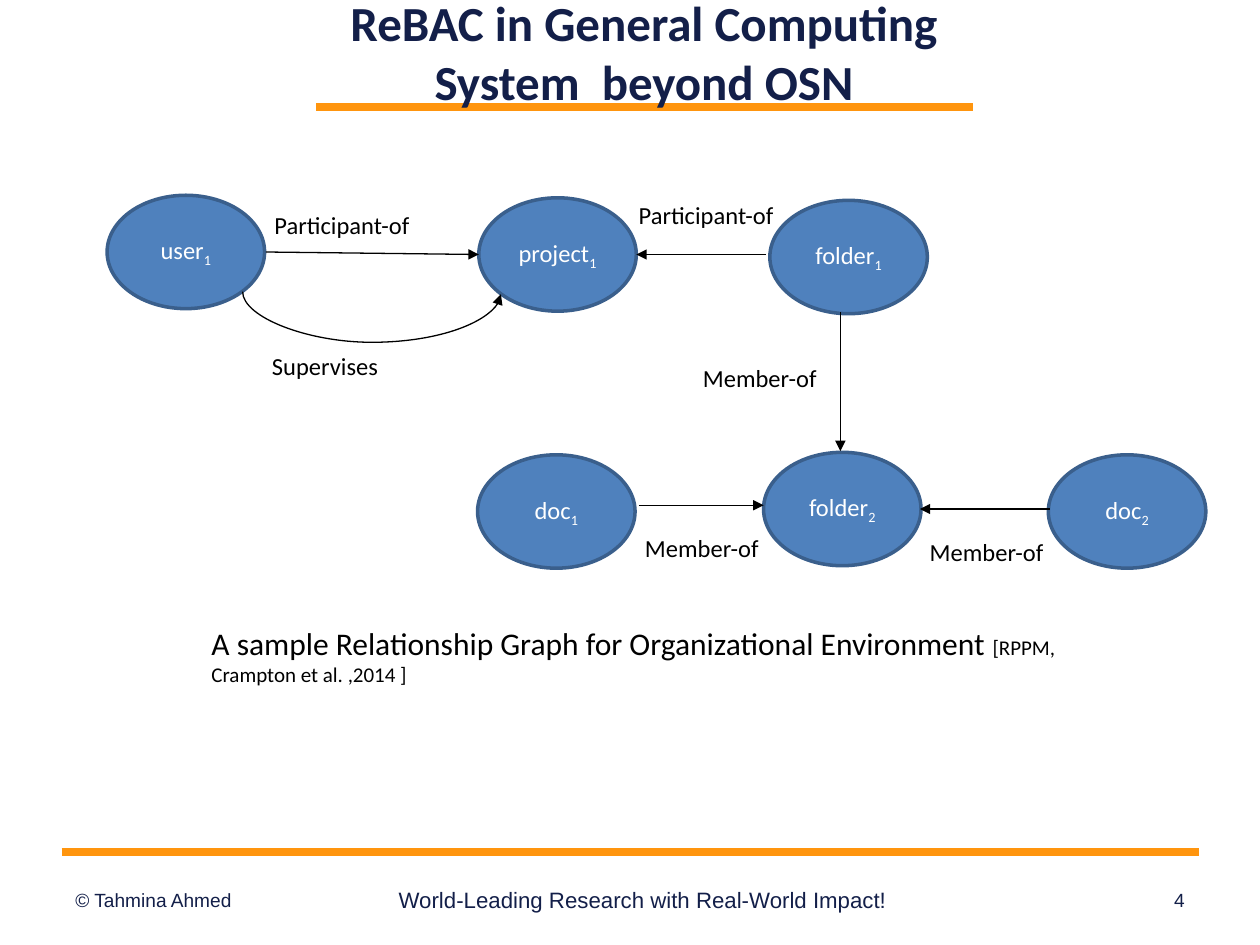
from lxml.etree import SubElement
from pptx import Presentation
from pptx.dml.color import RGBColor
from pptx.enum.shapes import MSO_CONNECTOR as LINK, MSO_SHAPE as SHAPE
from pptx.enum.text import MSO_ANCHOR as ANCHOR, PP_ALIGN as ALIGN
from pptx.oxml.ns import qn
from pptx.util import Inches, Pt

NAVY, ORANGE, BLUE, EDGE = "131F49", "FF950E", "4F81BD", "3A5F8C"
BLACK, WHITE = "000000", "FFFFFF"


def paint(target, code):
    """Give a fill, or the colour of a font, one solid colour."""
    target.solid()
    target.fore_color.rgb = RGBColor.from_string(code)


class Page:
    base = {"name": "Calibri", "size": 14, "bold": False, "color": BLACK}
    node = (1.25, 0.9)

    def __init__(self, deck):
        self.slide = deck.slides.add_slide(deck.slide_layouts[6])
        self.shapes = self.slide.shapes
        paint(self.slide.background.fill, WHITE)

    def run(self, para, text, **style):
        run = para.add_run()
        run.text = text
        look = {**self.base, **style}
        paint(run.font.fill, look.pop("color"))
        look["size"] = Pt(look["size"])
        for key, value in look.items():
            setattr(run.font, key, value)
        return run

    def text(self, box, text, align=ALIGN.LEFT, anchor=ANCHOR.TOP, **style):
        frame = self.shapes.add_textbox(*map(Inches, box)).text_frame
        frame.word_wrap = True
        frame.vertical_anchor = anchor
        para = frame.paragraphs[0]
        para.alignment = align
        self.run(para, text, **style)
        return para

    def oval(self, left, top, name, sub):
        oval = self.shapes.add_shape(
            SHAPE.OVAL, *map(Inches, (left, top, *self.node)))
        oval.shadow.inherit = False
        paint(oval.fill, BLUE)
        paint(oval.line.fill, EDGE)
        oval.line.width = Pt(2)
        frame = oval.text_frame
        frame.vertical_anchor = ANCHOR.MIDDLE
        para = frame.paragraphs[0]
        para.alignment = ALIGN.CENTER
        self.run(para, name, color=WHITE)
        low = self.run(para, sub, color=WHITE)
        low._r.get_or_add_rPr().set("baseline", "-25000")

    def line(self, ends, color=BLACK, width=0.75, kind=LINK.STRAIGHT):
        line = self.shapes.add_connector(kind, *map(Inches, ends))
        paint(line.line.fill, color)
        line.line.width = Pt(width)
        SubElement(line._element.spPr, qn("a:effectLst"))
        return line

    def arrow(self, ends, kind=LINK.STRAIGHT):
        line = self.line(ends, kind=kind)
        SubElement(line.line._get_or_add_ln(), qn("a:tailEnd"), type="triangle")
        return line

    def curve(self, ends, turn, bend):
        """Curved arrow, turned by degrees, bent by a multiple of its width."""
        props = self.arrow(ends, LINK.CURVE)._element.spPr
        props.find(qn("a:xfrm")).set("rot", str(turn * 60000))
        geom = props.find(qn("a:prstGeom"))
        guides = geom.find(qn("a:avLst"))
        if guides is None:
            guides = SubElement(geom, qn("a:avLst"))
        SubElement(guides, qn("a:gd"), name="adj1", fmla=f"val {bend * 100000}")


def main():
    deck = Presentation()
    deck.slide_width, deck.slide_height = Inches(10), Inches(7.5)
    page = Page(deck)

    # Title and footer, with their rules
    for ends in ((2.51, 0.85, 7.72, 0.85), (0.49, 6.76, 9.52, 6.76)):
        page.line(ends, ORANGE, 4.31)
    page.text((2.28, 0.06, 5.66, 0.69),
              "ReBAC in General Computing System  beyond OSN",
              ALIGN.CENTER, ANCHOR.MIDDLE, size=28, bold=True, color=NAVY)
    for left, width, text, align, size in (
            (0.5, 2.33, "© Tahmina Ahmed", ALIGN.LEFT, 10.9),
            (3.03, 4.14, "World-Leading Research with Real-World Impact!",
             ALIGN.CENTER, 12.7),
            (7.35, 2.15, "4", ALIGN.RIGHT, 10.9)):
        page.text((left, 6.94, width, 0.4), text, align, ANCHOR.MIDDLE,
                  name="Arial", size=size, color=NAVY)

    # Graph nodes
    for node in ((0.85, 1.55, "user", "1"), (3.8, 1.57, "project", "1"),
                 (6.11, 1.59, "folder", "1"), (6.06, 3.59, "folder", "2"),
                 (3.79, 3.61, "doc", "1"), (8.32, 3.61, "doc", "2")):
        page.oval(*node)

    # Relationships
    for ends in ((2.11, 2, 3.8, 2.02), (6.08, 2.02, 5.05, 2.02),
                 (6.67, 2.48, 6.67, 3.58), (5.07, 4.01, 6.06, 4.01),
                 (8.33, 4.04, 7.3, 4.04)):
        page.arrow(ends)
    page.curve((2.96, 1.3, 2.94, 3.35), turn=270, bend=20)

    # Relationship labels
    for left, top, text in (
            (2.08, 1.62, "Participant-of"), (4.97, 1.54, "Participant-of"),
            (2.06, 2.74, "Supervises"), (5.48, 2.83, "Member-of"),
            (5.02, 4.18, "Member-of"), (7.28, 4.21, "Member-of")):
        page.text((left, top, 1.69, 0.34), text)

    # Caption with its citation
    note = page.text((1.58, 4.9, 7.39, 0.61),
                     "A sample Relationship Graph for Organizational Environment ",
                     size=18)
    page.run(note, "[RPPM, Crampton et al. ,2014 ]", size=12)

    deck.save("out.pptx")


if __name__ == "__main__":
    main()
